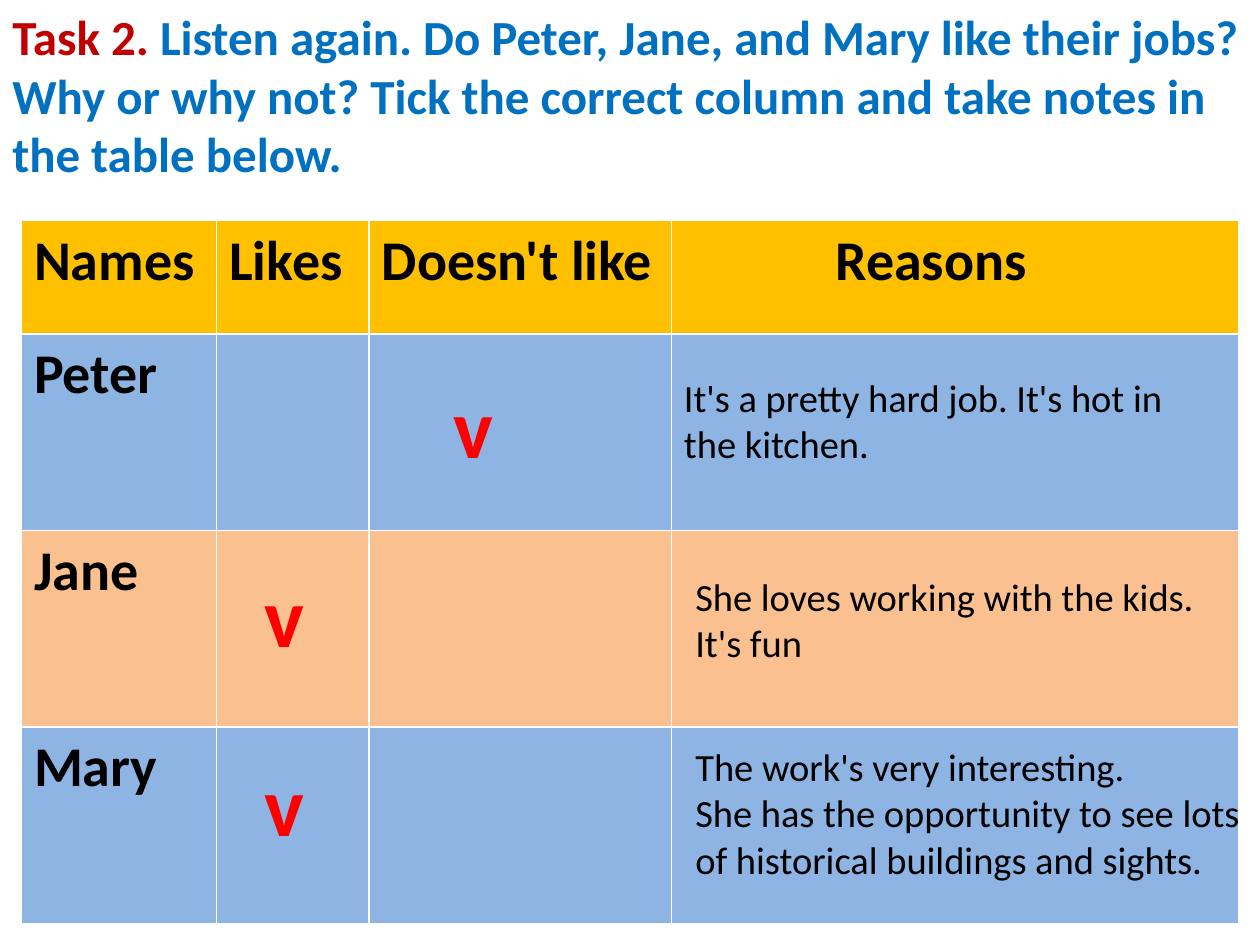
from pptx import Presentation
from pptx.dml.color import RGBColor
from pptx.util import Inches, Pt

FONT = "Calibri"
COLORS = {
    "task": "C00000", "instruction": "0070C0", "text": "000000", "tick": "FF0000",
    "header": "FFC000", "blue_row": "8EB4E3", "orange_row": "FAC090",
}

TASK = "Task 2. "
INSTRUCTION = ("Listen again. Do Peter, Jane, and Mary like their jobs? Why or why not? "
               "Tick the correct column and take notes in the table below.")
HEADERS = ["Names", "Likes", "Doesn't like", "Reasons"]
COLUMN_WIDTHS = [1.55, 1.21, 2.4, 4.5]
HEADER_HEIGHT, ROW_HEIGHT = 0.9, 1.56
REASONS_INDENT = 1.3
TABLE_LEFT, TABLE_TOP = 0.17, 1.75

TICK_LEFT = {"Likes": 2, "Doesn't like": 3.5}
TICK_TOP, TICK_STEP = 2.92, 1.5

# name, row colour, ticked column, reason lines, reason box (left, top, width, height)
PEOPLE = [
    ("Peter", "blue_row", "Doesn't like",
     ["It's a pretty hard job. It's hot in the kitchen."], (5.33, 2.92, 4.42, 0.84)),
    ("Jane", "orange_row", "Likes",
     ["She loves working with the kids. It's fun"], (5.42, 4.5, 4.33, 0.84)),
    ("Mary", "blue_row", "Likes",
     ["The work's very interesting.",
      "She has the opportunity to see lots of historical buildings and sights."],
     (5.42, 5.85, 4.58, 1.21)),
]


def rgb(color):
    return RGBColor.from_string(COLORS[color])


def style(run, size, color, bold=False):
    run.font.name = FONT
    run.font.size = Pt(size)
    run.font.bold = bold
    run.font.color.rgb = rgb(color)


def add_text(slide, box, lines, size, color, bold=False):
    frame = slide.shapes.add_textbox(*map(Inches, box)).text_frame
    frame.word_wrap = True
    frame.text = "\n".join(lines)
    for paragraph in frame.paragraphs:
        for run in paragraph.runs:
            style(run, size, color, bold)
    return frame


def add_jobs_table(slide):
    rows = [("header", HEADERS)]
    rows += [(color, [name, "", "", ""]) for name, color, *_ in PEOPLE]
    heights = [HEADER_HEIGHT] + [ROW_HEIGHT] * len(PEOPLE)
    table = slide.shapes.add_table(
        len(rows), len(HEADERS), Inches(TABLE_LEFT), Inches(TABLE_TOP),
        Inches(sum(COLUMN_WIDTHS)), Inches(sum(heights))).table
    for column, width in zip(table.columns, COLUMN_WIDTHS):
        column.width = Inches(width)
    for row, height, (color, texts) in zip(table.rows, heights, rows):
        row.height = Inches(height)
        for cell, text in zip(row.cells, texts):
            cell.fill.solid()
            cell.fill.fore_color.rgb = rgb(color)
            cell.text = text
            for run in cell.text_frame.paragraphs[0].runs:
                style(run, 32, "text", bold=True)
    table.cell(0, HEADERS.index("Reasons")).margin_left = Inches(REASONS_INDENT)


def main():
    presentation = Presentation()
    presentation.slide_width, presentation.slide_height = Inches(10), Inches(7.5)
    slide = presentation.slides.add_slide(presentation.slide_layouts[6])

    heading = add_text(slide, (0, 0, 10, 1.51), [TASK], 28, "task", bold=True)
    instruction = heading.paragraphs[0].add_run()
    instruction.text = INSTRUCTION
    style(instruction, 28, "instruction", bold=True)

    add_jobs_table(slide)
    for index, (_, _, ticked, reason, reason_box) in enumerate(PEOPLE):
        add_text(slide, reason_box, reason, 22, "text")
        tick_box = (TICK_LEFT[ticked], TICK_TOP + index * TICK_STEP, 0.67, 0.91)
        add_text(slide, tick_box, ["v"], 48, "tick", bold=True)

    presentation.save("out.pptx")


if __name__ == "__main__":
    main()
